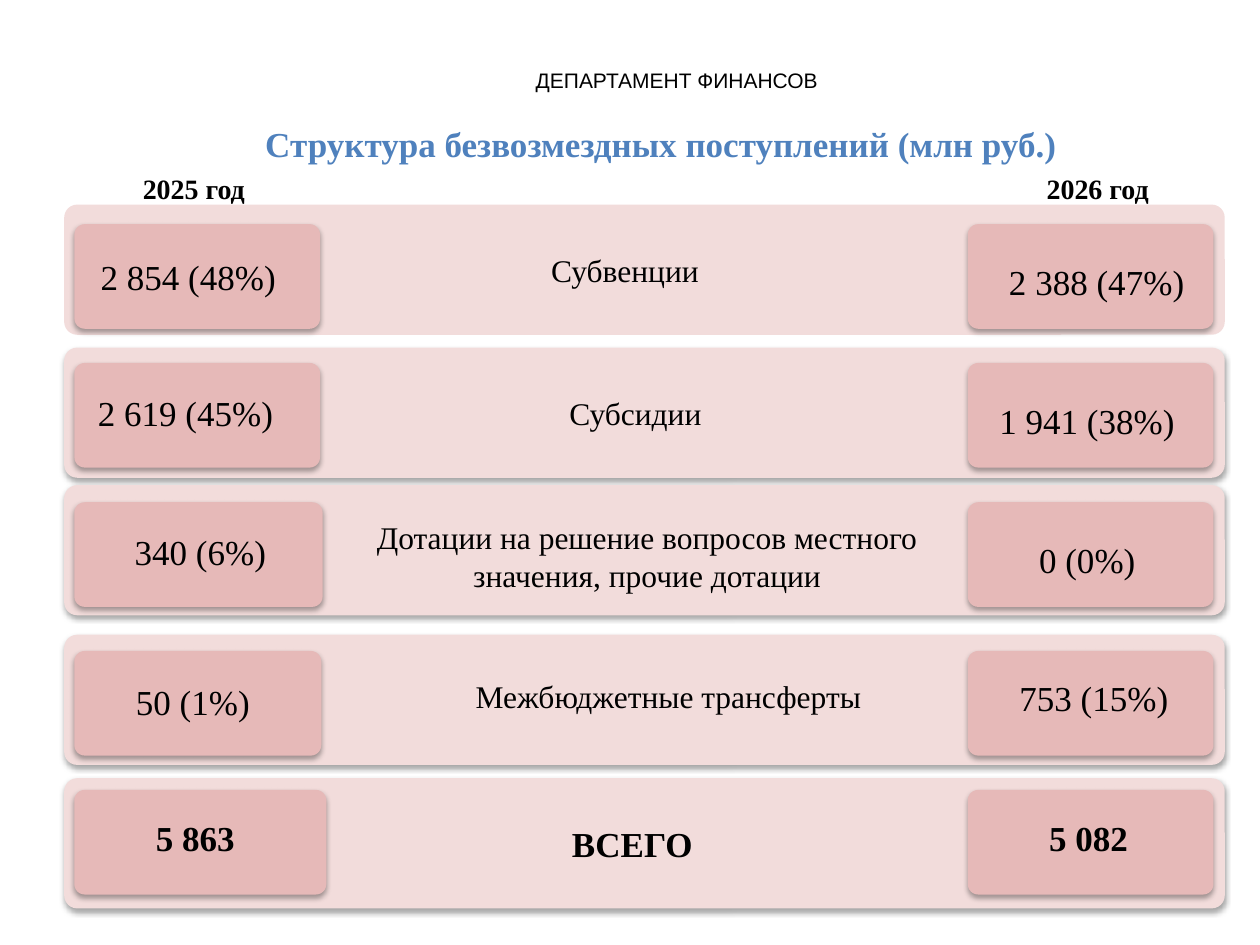
from dataclasses import dataclass

from lxml import etree
from pptx import Presentation
from pptx.dml.color import RGBColor
from pptx.enum.shapes import MSO_SHAPE as Preset
from pptx.enum.text import MSO_ANCHOR as Anchor, MSO_AUTO_SIZE as AutoSize, PP_ALIGN as Align
from pptx.oxml.ns import qn
from pptx.util import Pt

BLACK = RGBColor(0x00, 0x00, 0x00)
BLUE = RGBColor(0x4F, 0x81, 0xBD)
BAND_PINK = RGBColor(0xF2, 0xDC, 0xDB)
CARD_PINK = RGBColor(0xE6, 0xB9, 0xB8)
SERIF, SANS = "Times New Roman", "Arial"

BAND_LEFT, BAND_WIDTH, BAND_HEIGHT = 36.7, 663.2, 74.4
CARD_HEIGHT, CARD_WIDTH = 59.8, 140.4
LEFT_CARD, RIGHT_CARD = 42.5, 553
AMOUNT_HEIGHT = 31.5


@dataclass(frozen=True)
class Caption:
    """Text with the place of its box; in a band, left is where the text begins."""
    text: str
    left: float
    top: float = 0
    width: float = 0


@dataclass(frozen=True)
class Row:
    band_top: float
    card_top: float
    left_card_width: float
    label: Caption
    amount_2025: Caption
    amount_2026: Caption
    label_in_band: bool = False
    label_height: float = 29.1
    bold: bool = False
    band_shadow: bool = True


ROWS = [
    Row(116.9, 128.1, CARD_WIDTH, Caption("Субвенции", 312.8),
        Caption("2 854 (48%)", 50.4, 142.6, 115.2), Caption("2 388 (47%)", 569.5, 145.4, 115.2),
        label_in_band=True, band_shadow=False),
    Row(198.6, 207.4, CARD_WIDTH, Caption("Субсидии", 323.2),
        Caption("2 619 (45%)", 48.8, 220.3, 115.2), Caption("1 941 (38%)", 564, 224.8, 115.2),
        label_in_band=True),
    Row(277.2, 287, 141.9,
        Caption("Дотации на решение вопросов местного\nзначения, прочие дотации", 206.7, 292.5, 326.2),
        Caption("340 (6%)", 69.8, 299.7, 90), Caption("0 (0%)", 586.7, 304, 69.8),
        label_height=50.9),
    Row(362.7, 372, 141.1, Caption("Межбюджетные трансферты", 263.5, 383.3, 236.9),
        Caption("50 (1%)", 70.6, 385.4, 80), Caption("753 (15%)", 575.4, 383.3, 100)),
    Row(444.7, 451.4, 144, Caption("ВСЕГО", 324.7),
        Caption("5 863", 82, 463, 60), Caption("5 082", 592.4, 463, 60),
        label_in_band=True, bold=True),
]


def write(shape, text: str, *, size: float, font: str = SERIF, color: RGBColor = BLACK,
          bold: bool = False, align: Align = Align.LEFT) -> None:
    frame = shape.text_frame
    for index, line in enumerate(text.split("\n")):
        para = frame.add_paragraph() if index else frame.paragraphs[0]
        para.alignment = align
        span = para.add_run()
        span.text = line
        span.font.name, span.font.size = font, Pt(size)
        span.font.bold, span.font.color.rgb = bold, color


def add_caption(page, caption: Caption, height: float, *, wrap: bool = False, **style) -> None:
    box = page.shapes.add_textbox(Pt(caption.left), Pt(caption.top), Pt(caption.width), Pt(height))
    box.text_frame.word_wrap = wrap
    box.text_frame.auto_size = AutoSize.SHAPE_TO_FIT_TEXT
    write(box, caption.text, **style)


def add_soft_shadow(shape) -> None:
    effects = shape._element.spPr.find(qn("a:effectLst"))
    shadow = etree.SubElement(effects, qn("a:outerShdw"), blurRad=str(Pt(3.15)),
                              dist=str(Pt(1.81)), dir="5400000", rotWithShape="0")
    color = etree.SubElement(shadow, qn("a:srgbClr"), val="000000")
    etree.SubElement(color, qn("a:alpha"), val="35000")


def add_panel(page, left: float, top: float, width: float, height: float,
              fill: RGBColor, shadow: bool = True):
    panel = page.shapes.add_shape(Preset.ROUNDED_RECTANGLE, Pt(left), Pt(top), Pt(width), Pt(height))
    panel.adjustments[0] = 0.1
    panel.fill.solid()
    panel.fill.fore_color.rgb = fill
    panel.line.fill.background()
    panel.shadow.inherit = False
    if shadow:
        add_soft_shadow(panel)
    return panel


def add_row(page, row: Row) -> None:
    band = add_panel(page, BAND_LEFT, row.band_top, BAND_WIDTH, BAND_HEIGHT, BAND_PINK, row.band_shadow)
    add_panel(page, LEFT_CARD, row.card_top, row.left_card_width, CARD_HEIGHT, CARD_PINK)
    add_panel(page, RIGHT_CARD, row.card_top, CARD_WIDTH, CARD_HEIGHT, CARD_PINK)
    label_size = 20 if row.bold else 18
    if row.label_in_band:
        band.text_frame.margin_left = Pt(row.label.left - BAND_LEFT)
        band.text_frame.vertical_anchor = Anchor.MIDDLE
        write(band, row.label.text, size=label_size, bold=row.bold)
    else:
        add_caption(page, row.label, row.label_height, size=label_size, align=Align.CENTER)
    for amount in (row.amount_2025, row.amount_2026):
        add_caption(page, amount, AMOUNT_HEIGHT, size=20, bold=row.bold)


def main() -> None:
    deck = Presentation()
    deck.slide_width, deck.slide_height = Pt(720), Pt(540)
    page = deck.slides.add_slide(deck.slide_layouts[6])
    add_caption(page, Caption("ДЕПАРТАМЕНТ ФИНАНСОВ", 63.5, 35.3, 646.6), 21.8,
                wrap=True, size=12, font=SANS, align=Align.CENTER)
    add_caption(page, Caption("Структура безвозмездных поступлений (млн руб.)", 144.5, 66.2, 561.6),
                AMOUNT_HEIGHT, wrap=True, size=20, color=BLUE, bold=True)
    for row in ROWS:
        add_row(page, row)
    for year, left in (("2025 год", 74.5), ("2026 год", 591)):
        add_caption(page, Caption(year, left, 94.5, 73), 26.7, size=16, bold=True)
    deck.save("out.pptx")


if __name__ == "__main__":
    main()
